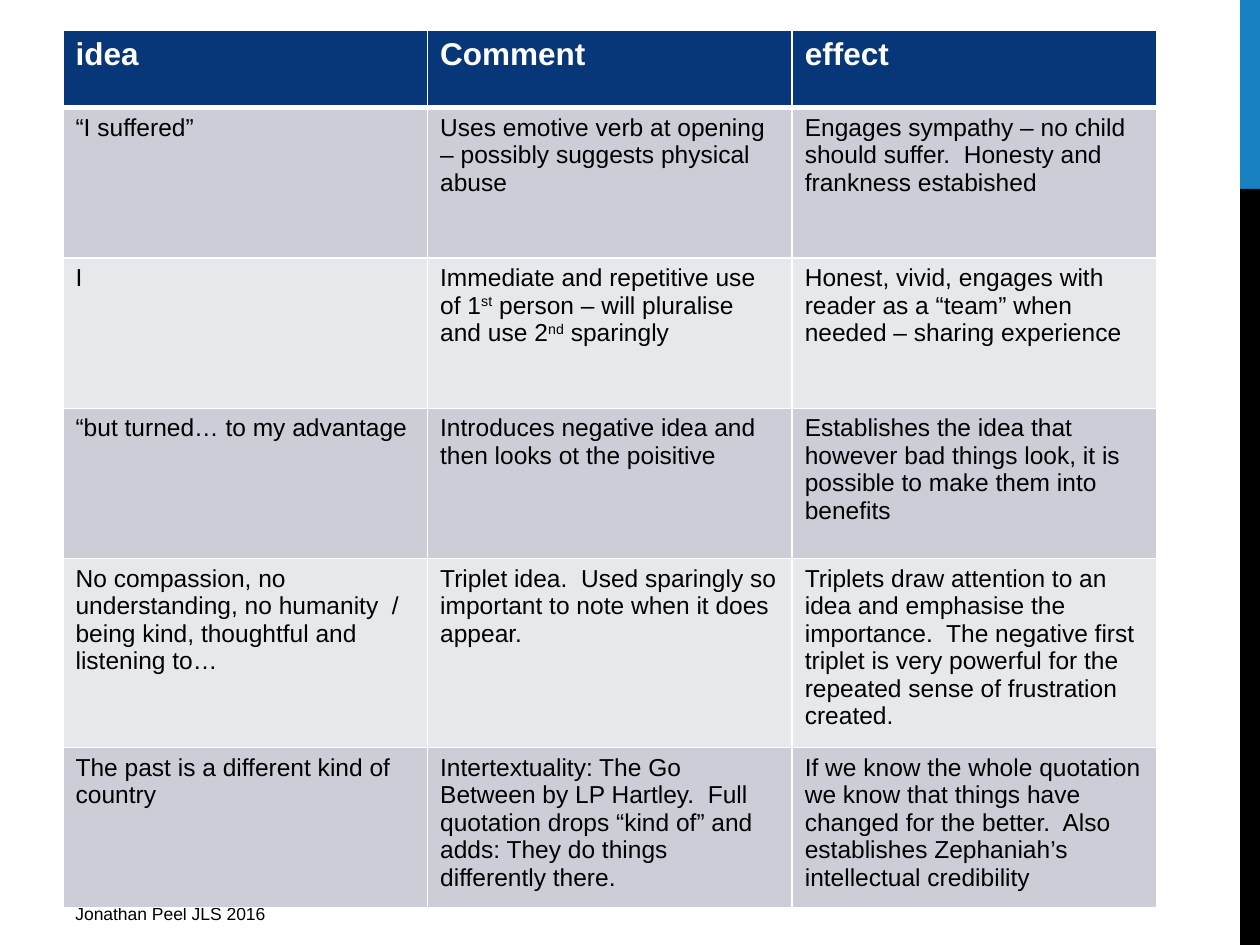
"""Build a slide with a table of ideas, comments and effects."""
from dataclasses import dataclass

from pptx import Presentation
from pptx.dml.color import RGBColor
from pptx.enum.shapes import MSO_SHAPE as Shape
from pptx.enum.text import MSO_ANCHOR as Anchor
from pptx.oxml import parse_xml
from pptx.oxml.ns import nsdecls
from pptx.util import Cm, Pt

WHITE = RGBColor(0xFF, 0xFF, 0xFF)
BLACK = RGBColor(0, 0, 0)
BLUE = RGBColor(0x17, 0x82, 0xBF)
NAVY = RGBColor(0x07, 0x37, 0x79)
DARK = RGBColor(0xCC, 0xCE, 0xD7)
LIGHT = RGBColor(0xE7, 0xE8, 0xEC)

WIDTH, HEIGHT = 25.4, 19.05
LEFT = 1.27
COL = 7.35
HEAD_ROW, ROW = 1.56, 3.03
HEAD = {"size": Pt(18), "bold": True, "name": "Arial"}
BODY = {"size": Pt(14), "bold": False, "name": "Arial"}
FOOT = {"size": Pt(10), "bold": False, "name": "Arial"}


@dataclass
class Stripe:
    top: float
    height: float
    color: RGBColor


STRIPES = [Stripe(0, 3.81, BLUE), Stripe(3.81, 15.24, BLACK)]
ROWS = [
    ("idea", "Comment", "effect"),
    ("“I suffered”",
     "Uses emotive verb at opening – possibly suggests physical abuse",
     "Engages sympathy – no child should suffer.  Honesty and frankness estabished"),
    ("I",
     "Immediate and repetitive use of 1^st^ person – will pluralise and use 2^nd^ sparingly",
     "Honest, vivid, engages with reader as a “team” when needed – sharing experience"),
    ("“but turned… to my advantage",
     "Introduces negative idea and then looks ot the poisitive",
     "Establishes the idea that however bad things look, it is possible to make them into benefits"),
    ("No compassion, no understanding, no humanity  / being kind, thoughtful and listening to…",
     "Triplet idea.  Used sparingly so important to note when it does appear.",
     "Triplets draw attention to an idea and emphasise the importance.  The negative first "
     "triplet is very powerful for the repeated sense of frustration created."),
    ("The past is a different kind of country",
     "Intertextuality: The Go Between by LP Hartley.  Full quotation drops “kind of” and adds: "
     "They do things differently there.",
     "If we know the whole quotation we know that things have changed for the better.  Also "
     "establishes Zephaniah’s intellectual credibility"),
]


def write(frame, text: str, style: dict, color: RGBColor) -> None:
    """Write text, raising the parts set between carets."""
    for i, part in enumerate(text.split("^")):
        run = frame.paragraphs[0].add_run()
        run.text = part
        for key, value in style.items():
            setattr(run.font, key, value)
        run.font.color.rgb = color
        if i % 2:
            run._r.get_or_add_rPr().set("baseline", "30000")


def edge(cell, side: str, width: int) -> None:
    """Draw one white border of a cell."""
    cell._tc.get_or_add_tcPr().append(parse_xml(
        f'<a:ln{side} {nsdecls("a")} w="{width}"><a:solidFill>'
        f'<a:srgbClr val="{WHITE}"/></a:solidFill></a:ln{side}>'))


def draw_stripe(slide, stripe: Stripe) -> None:
    """Draw one stripe along the right side."""
    box = slide.shapes.add_shape(
        Shape.RECTANGLE, Cm(25), Cm(stripe.top), Cm(WIDTH - 25), Cm(stripe.height))
    box.shadow.inherit = False
    box.fill.solid()
    box.fill.fore_color.rgb = stripe.color
    box.line.fill.background()


def draw_foot(slide) -> None:
    """Draw the author line."""
    frame = slide.shapes.add_textbox(Cm(LEFT), Cm(18.03), Cm(9.53), Cm(0.79)).text_frame
    frame.word_wrap = True
    frame.vertical_anchor = Anchor.MIDDLE
    write(frame, "Jonathan Peel JLS 2016", FOOT, BLACK)


def draw_table(slide) -> None:
    """Draw the table with its banded rows."""
    count = len(ROWS[0])
    high = HEAD_ROW + ROW * (len(ROWS) - 1)
    table = slide.shapes.add_table(
        len(ROWS), count, Cm(LEFT), Cm(0.61), Cm(COL * count), Cm(high)).table
    for col in table.columns:
        col.width = Cm(COL)
    for r, texts in enumerate(ROWS):
        table.rows[r].height = Cm(ROW if r else HEAD_ROW)
        band = (DARK if r % 2 else LIGHT) if r else NAVY
        for c, text in enumerate(texts):
            cell = table.cell(r, c)
            for side in "LRTB":
                thick = (r, side) in ((0, "B"), (1, "T"))
                edge(cell, side, Pt(3 if thick else 1))
            cell.fill.solid()
            cell.fill.fore_color.rgb = band
            write(cell.text_frame, text, BODY if r else HEAD, BLACK if r else WHITE)


def main() -> None:
    """Build and save the slide."""
    deck = Presentation()
    deck.slide_width, deck.slide_height = Cm(WIDTH), Cm(HEIGHT)
    slide = deck.slides.add_slide(deck.slide_layouts[6])
    for stripe in STRIPES:
        draw_stripe(slide, stripe)
    draw_foot(slide)
    draw_table(slide)
    deck.save("out.pptx")


if __name__ == "__main__":
    main()
